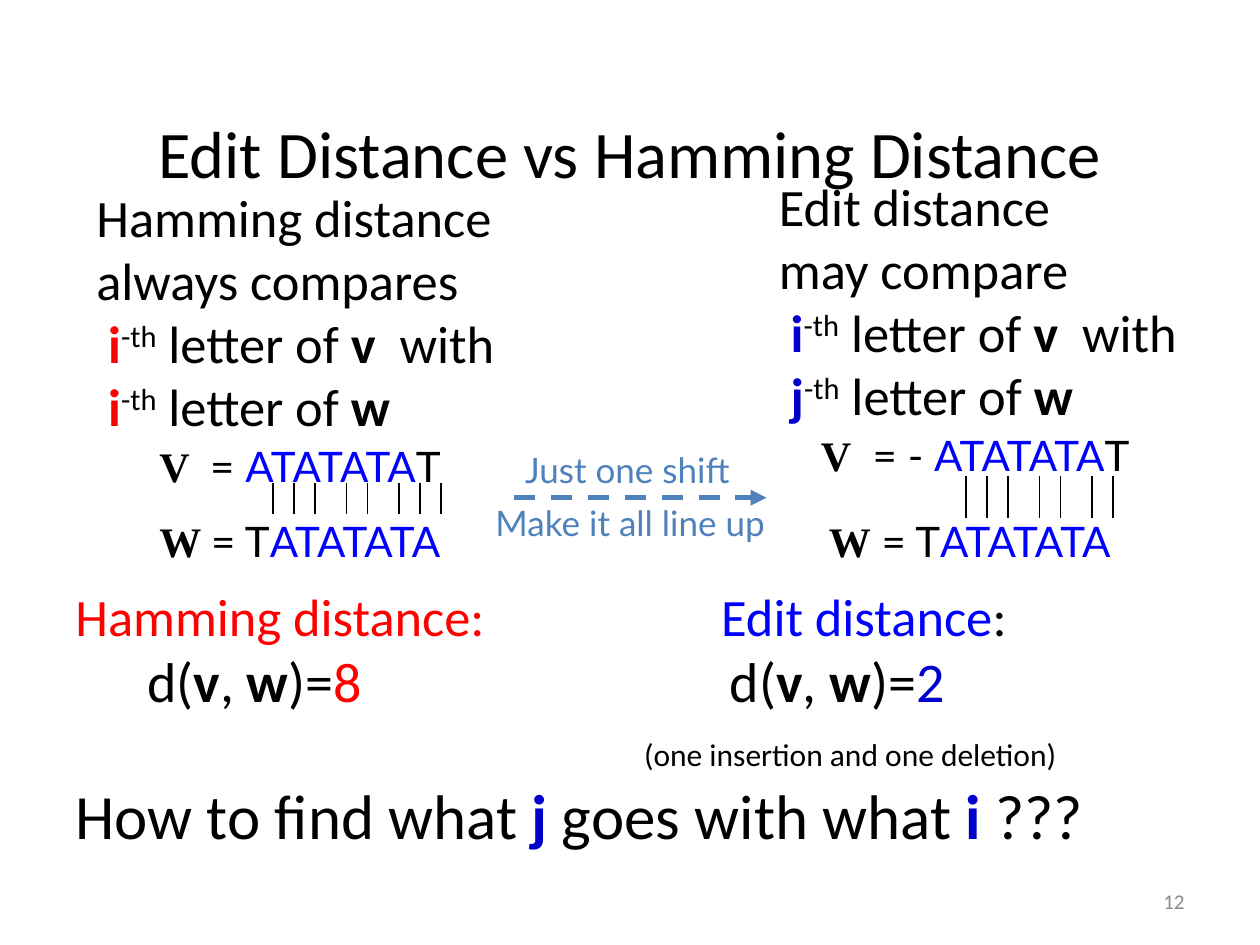
"""Build a slide that contrasts edit distance with Hamming distance."""
from dataclasses import dataclass

from lxml import etree
from pptx import Presentation
from pptx.dml.color import RGBColor
from pptx.enum.dml import MSO_LINE
from pptx.enum.shapes import MSO_CONNECTOR
from pptx.enum.text import MSO_ANCHOR, PP_ALIGN
from pptx.oxml.ns import qn
from pptx.util import Pt

STRAIGHT = MSO_CONNECTOR.STRAIGHT
DASH = MSO_LINE.DASH
LEFT, CENTER, RIGHT = PP_ALIGN.LEFT, PP_ALIGN.CENTER, PP_ALIGN.RIGHT
TOP, MIDDLE = MSO_ANCHOR.TOP, MSO_ANCHOR.MIDDLE


@dataclass(frozen=True)
class Theme:
    """Hold the colours, fonts and type sizes."""
    black: str = "000000"
    red: str = "FF0000"
    blue: str = "0000FF"
    navy: str = "0000CC"
    steel: str = "4F81BD"
    grey: str = "8C8C8C"
    body: str = "Calibri"
    sequence: str = "Lato"
    serif: str = "Times New Roman"
    title: int = 38
    question: int = 36
    formula: int = 32
    text: int = 30
    letters: int = 24
    label: int = 20
    remark: int = 18
    number: int = 12


THEME = Theme()
TICK_OFFSETS = (0, 12, 24, 42, 54, 72, 84, 96)


def span(text, size=THEME.text, colour=THEME.black, bold=False, face=THEME.body, raised=False):
    """Describe one run of text."""
    return text, size, colour, bold, face, raised


def add_span(para, text, size, colour, bold, face, raised):
    """Append one formatted run to a paragraph."""
    run = para.add_run()
    run.text = text
    run.font.size = Pt(size)
    run.font.bold = bold
    run.font.name = face
    run.font.color.rgb = RGBColor.from_string(colour)
    if raised:
        run.font._element.set("baseline", "30000")


def add_text(page, bounds, lines, align=LEFT, anchor=TOP, wrap=True):
    """Add a text box with one paragraph per line and return its paragraphs."""
    frame = page.shapes.add_textbox(*map(Pt, bounds)).text_frame
    frame.word_wrap = wrap
    frame.vertical_anchor = anchor
    for index, spans in enumerate(lines):
        para = frame.add_paragraph() if index else frame.paragraphs[0]
        para.alignment = align
        for item in spans:
            add_span(para, *item)
    return frame.paragraphs


def set_tabs(para, stops):
    """Give a paragraph left tab stops."""
    tabs = etree.SubElement(para._p.get_or_add_pPr(), qn("a:tabLst"))
    for stop in stops:
        etree.SubElement(tabs, qn("a:tab"), pos=str(Pt(stop)), algn="l")


def add_line(page, start, end, colour, width):
    """Add a straight line without a shadow."""
    line = page.shapes.add_connector(STRAIGHT, *map(Pt, (*start, *end)))
    line.line.color.rgb = RGBColor.from_string(colour)
    line.line.width = Pt(width)
    etree.SubElement(line._element.spPr, qn("a:effectLst"))
    return line


def add_shift_arrow(page):
    """Add the dashed arrow between the two alignments."""
    arrow = add_line(page, (294, 284.4), (438, 284.4), THEME.steel, 3)
    arrow.line.dash_style = DASH
    etree.SubElement(arrow.line._get_or_add_ln(), qn("a:tailEnd"), type="triangle")


def add_ticks(page, left, top, bottom, count):
    """Add the match marks between two sequences."""
    for offset in TICK_OFFSETS[:count]:
        add_line(page, (left + offset, top), (left + offset, bottom), THEME.black, 0.75)


def add_sequence(page, left, top, name, parts):
    """Add a named sequence whose parts are pairs of text and colour."""
    spans = [span(name, THEME.letters, bold=True, face=THEME.serif)]
    spans += [span(text, THEME.letters, colour, face=THEME.sequence) for text, colour in parts]
    add_text(page, (left, top, 204, 36), [spans])


def letter_line(index, colour, name, ending=""):
    """Describe a line that names a letter of a sequence."""
    spans = [span(" "), span(index, colour=colour, bold=True), span("-th", raised=True),
             span(" letter of "), span(name, bold=True)]
    return spans + [span(ending)] if ending else spans


def add_comparison(page, left, top, heading, verb, colour, indices):
    """Add the explanation of one distance."""
    first, second = indices
    add_text(page, (left, top, 282, 151), [
        [span(heading)], [span(verb)],
        letter_line(first, colour, "v", "  with"), letter_line(second, colour, "w")])


def formula(value, colour):
    """Describe the distance formula with its value."""
    parts = (("d(", False), ("v", True), (", ", False), ("w", True), (")=", False))
    spans = [span(text, THEME.formula, bold=bold) for text, bold in parts]
    return spans + [span(value, THEME.formula, colour)]


def add_results(page):
    """Add both distances and the closing question."""
    big = THEME.question
    tab = span("\t")
    lines = [
        [span("Hamming distance:", colour=THEME.red), tab,
         span("Edit distance", colour=THEME.blue), span(":")],
        [tab, *formula("8", THEME.red), tab, *formula("2", THEME.navy)],
        [tab, span("(one insertion and one deletion)", THEME.remark)],
        [span("How to find what ", big), span("j", big, THEME.navy, True),
         span(" goes with what ", big), span("i", big, THEME.navy, True), span(" ???", big)]]
    paras = add_text(page, (36, 330, 684, 204), lines)
    for para, stops in zip(paras, ((369,), (41, 374), (325,))):
        set_tabs(para, stops)


def main():
    """Build and save the deck."""
    deck = Presentation()
    deck.slide_width, deck.slide_height = Pt(720), Pt(540)
    page = deck.slides.add_slide(deck.slide_layouts[6])
    black, blue = THEME.black, THEME.blue

    add_text(page, (36, 42, 648, 90), [[span("Edit Distance vs Hamming Distance", THEME.title)]],
             CENTER, MIDDLE)
    add_comparison(page, 48, 102, "Hamming distance", "always compares", THEME.red, "ii")
    add_comparison(page, 438, 96, "Edit distance", "may compare", THEME.navy, "ij")

    repeat = ("ATATATA", blue)
    add_sequence(page, 84, 248.4, "V ", [(" = ", black), repeat, ("T", black)])
    add_sequence(page, 84, 291, "W ", [("= T", black), repeat])
    add_sequence(page, 462, 242, "V", [("  = - ", black), repeat, ("T", black)])
    add_sequence(page, 466.5, 291, "W", [(" = T", black), repeat])
    add_ticks(page, 156, 276, 294, 8)
    add_ticks(page, 552, 272, 296, 7)

    for text, bounds in (("Just one shift", (293, 252.7, 132.5, 31)),
                         ("Make it all line up", (276, 283, 170, 31))):
        add_text(page, bounds, [[span(text, THEME.label, THEME.steel, face=THEME.sequence)]],
                 wrap=False)
    add_shift_arrow(page)
    add_results(page)
    add_text(page, (516, 500.5, 168, 28.8), [[span("12", THEME.number, THEME.grey)]],
             RIGHT, MIDDLE)
    deck.save("out.pptx")


if __name__ == "__main__":
    main()
